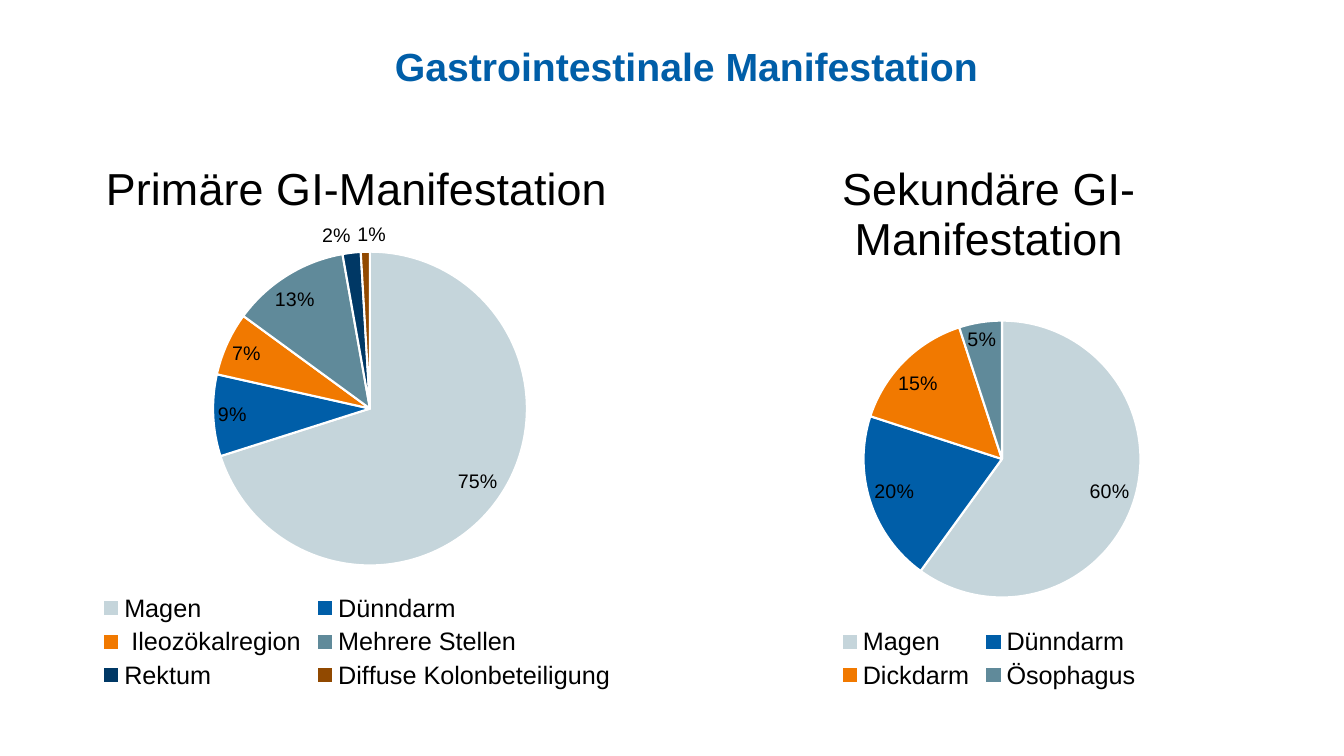
import pptx
import pptx.chart.data
import pptx.dml.color
import pptx.enum.chart
import pptx.enum.text
import pptx.oxml
import pptx.oxml.ns
import pptx.util

Pt = pptx.util.Pt


def color(code):
    return pptx.dml.color.RGBColor.from_string(code)


def style(font, size, hue="000000", bold=False):
    font.name = "Arial"
    font.size = Pt(size)
    font.bold = bold
    font.color.rgb = color(hue)


def write(frame, text, **form):
    para = frame.paragraphs[0]
    para.alignment = pptx.enum.text.PP_ALIGN.CENTER
    run = para.add_run()
    run.text = text
    style(run.font, **form)


class Deck:
    hues = ["C5D5DB", "005EA8", "F17900", "608A9A", "003865", "914900"]

    def __init__(self):
        self.file = pptx.Presentation()
        self.file.slide_width = Pt(960)
        self.file.slide_height = Pt(540)
        self.slide = self.file.slides.add_slide(self.file.slide_layouts[6])

    def text(self, box, text, **form):
        shape = self.slide.shapes.add_textbox(*map(Pt, box))
        shape.text_frame.word_wrap = True
        write(shape.text_frame, text, **form)

    def pie(self, box, title, parts, area):
        data = pptx.chart.data.CategoryChartData(number_format="0%")
        data.categories = list(parts)
        data.add_series("Series 1", list(parts.values()))
        kind = pptx.enum.chart.XL_CHART_TYPE.PIE
        chart = self.slide.shapes.add_chart(kind, *map(Pt, box), data).chart
        style(chart.font, 10)

        # Title and legend
        chart.has_title = True
        write(chart.chart_title.text_frame, title, size=32)
        chart.has_legend = True
        chart.legend.position = pptx.enum.chart.XL_LEGEND_POSITION.BOTTOM
        chart.legend.include_in_layout = False
        style(chart.legend.font, 18)

        # Slices
        chart.plots[0].vary_by_categories = True
        series = chart.plots[0].series[0]
        for index, hue in enumerate(self.hues[:len(parts)]):
            slot = series.points[index].format
            slot.fill.solid()
            slot.fill.fore_color.rgb = color(hue)
            slot.line.color.rgb = color("FFFFFF")
            slot.line.width = Pt(1.5)

        # Value labels
        labels = series.data_labels
        labels.show_value = True
        labels.number_format = "0%"
        labels.number_format_is_linked = False
        labels.position = pptx.enum.chart.XL_LABEL_POSITION.BEST_FIT
        style(labels.font, 14)
        self.place(chart, area)

    def place(self, chart, area):
        """Set the pie's frame as fractions of the chart."""
        qn = pptx.oxml.ns.qn
        plot = chart.element.find(".//" + qn("c:plotArea"))
        for old in plot.findall(qn("c:layout")):
            plot.remove(old)
        sides = "".join(f'<c:{key} val="{val}"/>' for key, val in zip("xywh", area))
        plot.insert(0, pptx.oxml.parse_xml(
            f'<c:layout {pptx.oxml.ns.nsdecls("c")}><c:manualLayout>'
            '<c:layoutTarget val="inner"/><c:xMode val="edge"/><c:yMode val="edge"/>'
            f'{sides}</c:manualLayout></c:layout>'))


def main():
    deck = Deck()
    top, wide, high = 95.76, 470.88, 400.32

    # Primary sites
    deck.pie((19.44, top, wide, high), "Primäre GI-Manifestation", {
        "Magen": 0.75, "Dünndarm": 0.09, " Ileozökalregion": 0.07,
        "Mehrere Stellen": 0.13, "Rektum": 0.02,
        "Diffuse Kolonbeteiligung": 0.01}, (0.28, 0.21, 0.48, 0.56))

    # Secondary sites
    deck.pie((470.88, top, wide, high), "Sekundäre GI-Manifestation", {
        "Magen": 0.6, "Dünndarm": 0.2, "Dickdarm": 0.15,
        "Ösophagus": 0.05}, (0.31, 0.33, 0.42, 0.5))

    # Heading
    deck.text((156.96, 26.64, 666.72, 41.04), "Gastrointestinale Manifestation",
              size=28, hue="005EA8", bold=True)
    deck.file.save("out.pptx")


if __name__ == "__main__":
    main()
